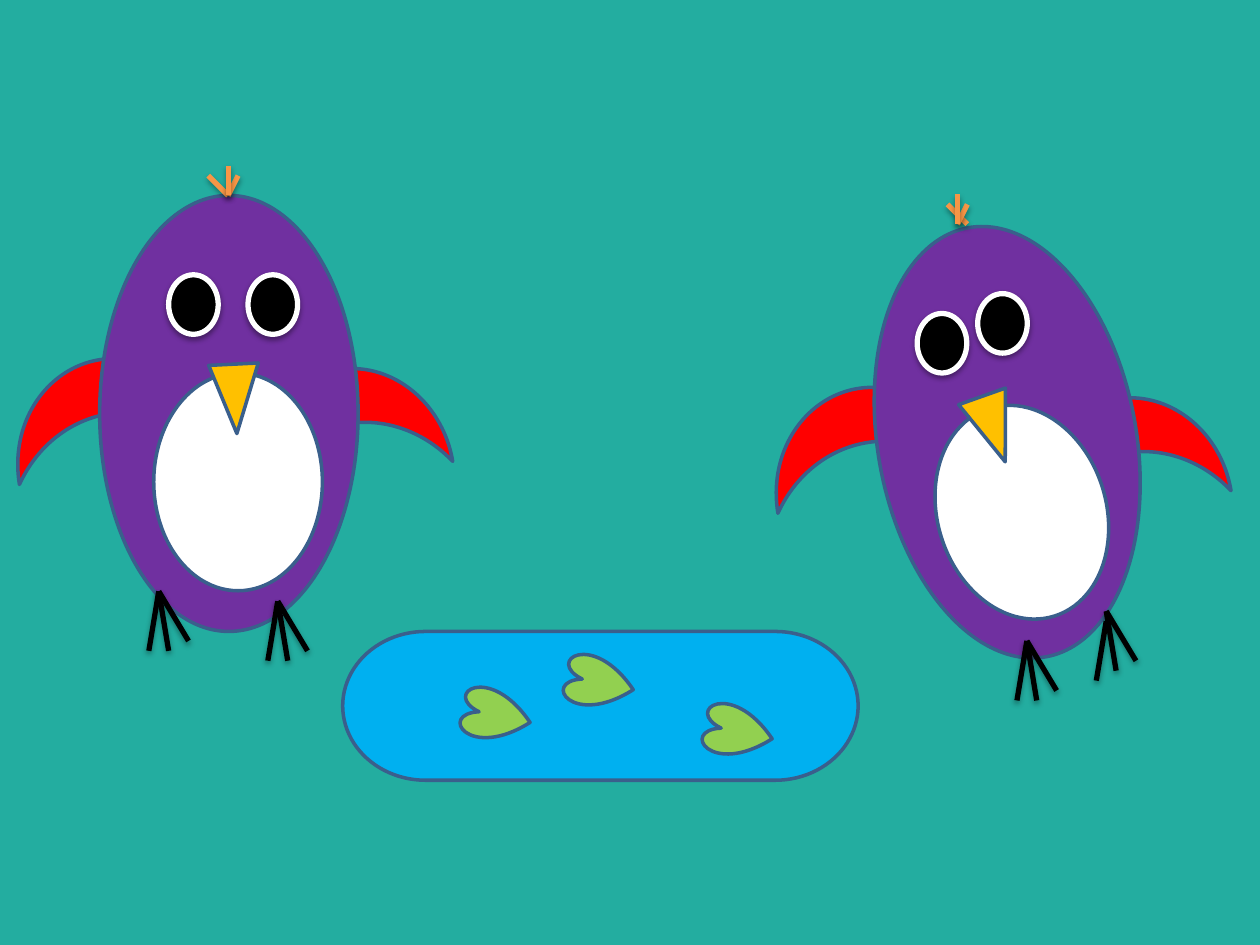
from dataclasses import dataclass
from typing import Optional

from pptx import Presentation
from pptx import util as u
from pptx.dml.color import RGBColor
from pptx.enum import shapes
from pptx.oxml import ns
from lxml import etree

Shape = shapes.MSO_SHAPE
Point = tuple[float, float]

TEAL = RGBColor(0x23, 0xAD, 0xA0)
PURPLE = RGBColor(0x70, 0x30, 0xA0)
RED = RGBColor(0xFF, 0x00, 0x00)
BLACK = RGBColor(0x00, 0x00, 0x00)
WHITE = RGBColor(0xFF, 0xFF, 0xFF)
GOLD = RGBColor(0xFF, 0xC0, 0x00)
ORANGE = RGBColor(0xF7, 0x96, 0x46)
BLUE = RGBColor(0x00, 0xB0, 0xF0)
GREEN = RGBColor(0x92, 0xD0, 0x50)
OUTLINE = RGBColor(0x3A, 0x5F, 0x8C)

# All lengths below are in centimetres


@dataclass(frozen=True)
class Part:
    preset: int
    size: Point
    fill: RGBColor
    line: RGBColor = OUTLINE
    width: float = 2
    shadow_alpha: Optional[int] = None


WING = Part(Shape.MOON, (2.21, 3.99), RED)
BODY = Part(Shape.FLOWCHART_CONNECTOR, (5.21, 8.79), PURPLE)
EYE = Part(Shape.FLOWCHART_CONNECTOR, (1, 1.2), BLACK, WHITE, 3, 38)
BELLY = Part(Shape.FLOWCHART_CONNECTOR, (3.4, 4.39), WHITE)
BEAK = Part(Shape.ISOSCELES_TRIANGLE, (1, 1.4), GOLD)
POND = Part(Shape.FLOWCHART_TERMINATOR, (10.39, 3), BLUE)
LEAF = Part(Shape.HEART, (1, 1.4), GREEN)

WING_ANGLE = 80.4
LEAF_ANGLE = 281.8


@dataclass(frozen=True)
class Foot:
    ankle: Point
    drop: float = 0  # how far the first toe sits below the ankle


@dataclass(frozen=True)
class Bird:
    wings: tuple[Point, Point]
    body: Point
    eyes: tuple[Point, Point]
    belly: Point
    beak: Point
    crest: Point
    feet: tuple[Foot, Foot]
    beak_angle: float
    body_angle: float = 0
    belly_angle: float = 0
    feather_shift: float = 0  # sideways offset of the left feather


LEFT_BIRD = Bird(
    wings=((1.07, 6.35), (5.87, 6.55)), body=(2.01, 3.94),
    eyes=((3.4, 5.54), (5, 5.54)), belly=(3.1, 7.52), beak=(4.24, 7.34),
    crest=(4.6, 3.94), feet=(Foot((3.2, 11.92)), Foot((5.6, 12.12))),
    beak_angle=177.2)
RIGHT_BIRD = Bird(
    wings=((16.36, 6.93), (21.56, 7.14)), body=(17.7, 4.52),
    eyes=((18.49, 6.32), (19.71, 5.92)), belly=(18.9, 8.13),
    beak=(19.53, 7.95), crest=(19.3, 4.52),
    feet=(Foot((20.7, 12.92)), Foot((22.3, 12.32), drop=0.2)),
    beak_angle=160.5, body_angle=349.7, belly_angle=342.5,
    feather_shift=0.2)
LEAVES = ((9.5, 13.72), (11.58, 13.06), (14.38, 14.05))


def add_shadow(properties, alpha: int, distance: float) -> None:
    """Give a shape or connector a soft shadow straight below it."""
    effects = properties.find(ns.qn("a:effectLst"))
    if effects is None:
        effects = etree.SubElement(properties, ns.qn("a:effectLst"))
    shadow = etree.SubElement(
        effects, ns.qn("a:outerShdw"), blurRad=str(u.Pt(3.1)),
        dist=str(u.Pt(distance)), dir="5400000", rotWithShape="0")
    color = etree.SubElement(shadow, ns.qn("a:srgbClr"), val=str(BLACK))
    etree.SubElement(color, ns.qn("a:alpha"), val=str(alpha * 1000))


def add_part(group, part: Part, at: Point, angle: float = 0) -> None:
    shape = group.shapes.add_shape(
        part.preset, *(u.Cm(length) for length in at + part.size))
    shape.rotation = angle
    shape.fill.solid()
    shape.fill.fore_color.rgb = part.fill
    shape.line.color.rgb = part.line
    shape.line.width = u.Pt(part.width)
    shape.shadow.inherit = False
    if part.shadow_alpha is not None:
        add_shadow(shape._element.spPr, part.shadow_alpha, 1.6)


def add_stroke(group, start: Point, end: Point, color: RGBColor) -> None:
    connector = group.shapes.add_connector(
        shapes.MSO_CONNECTOR.STRAIGHT,
        *(u.Cm(length) for length in start + end))
    connector.line.color.rgb = color
    connector.line.width = u.Pt(3)
    add_shadow(connector._element.spPr, 35, 1.8)


def add_foot(group, foot: Foot) -> None:
    x, y = foot.ankle
    for dx, dy, drop in ((-0.2, 1.2, foot.drop), (0.6, 1, 0), (0.2, 1.2, 0)):
        add_stroke(group, (x, y + drop), (x + dx, y + dy + drop), BLACK)


def add_crest(group, base: Point, shift: float) -> None:
    x, y = base
    add_stroke(group, (x + shift - 0.4, y - 0.4), (x + shift, y), ORANGE)
    for dx, dy in ((0.2, -0.4), (0, -0.6)):
        add_stroke(group, (x + dx, y + dy), base, ORANGE)


def add_bird(slide, bird: Bird) -> None:
    group = slide.shapes.add_group_shape()
    for wing in bird.wings:
        add_part(group, WING, wing, WING_ANGLE)
    add_part(group, BODY, bird.body, bird.body_angle)
    for eye in bird.eyes:
        add_part(group, EYE, eye)
    for foot in bird.feet:
        add_foot(group, foot)
    add_crest(group, bird.crest, bird.feather_shift)
    add_part(group, BELLY, bird.belly, bird.belly_angle)
    add_part(group, BEAK, bird.beak, bird.beak_angle)


def add_pond(slide) -> None:
    group = slide.shapes.add_group_shape()
    add_part(group, POND, (6.91, 12.73))
    for leaf in LEAVES:
        add_part(group, LEAF, leaf, LEAF_ANGLE)


def main() -> None:
    presentation = Presentation()
    presentation.slide_width = u.Cm(25.4)
    presentation.slide_height = u.Cm(19.05)

    # Blank layout, as the slide has no title
    slide = presentation.slides.add_slide(presentation.slide_layouts[6])
    slide.background.fill.solid()
    slide.background.fill.fore_color.rgb = TEAL

    # Two birds beside a pond
    for bird in (RIGHT_BIRD, LEFT_BIRD):
        add_bird(slide, bird)
    add_pond(slide)

    presentation.save("out.pptx")


if __name__ == "__main__":
    main()
